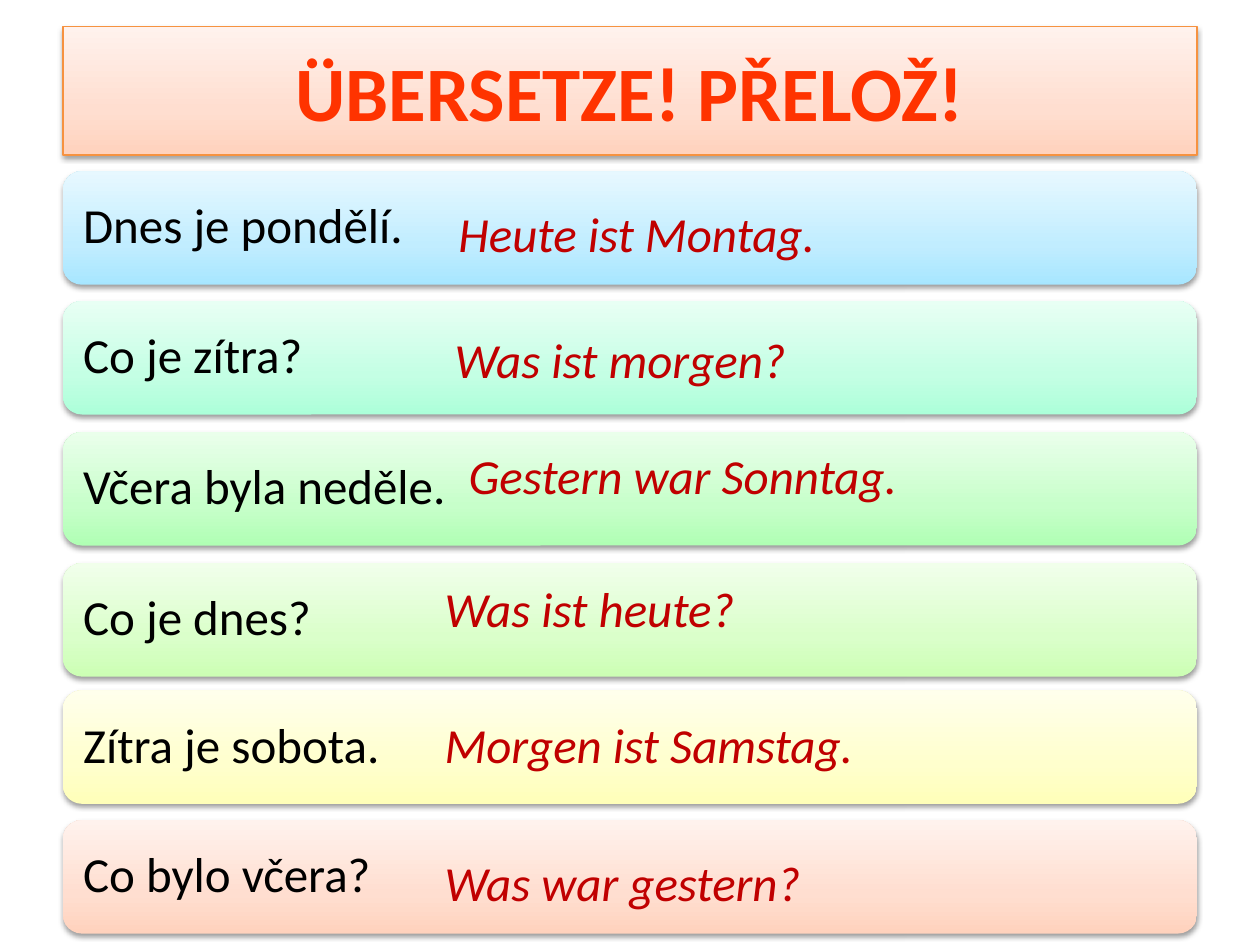
import copy

import lxml.etree
import pptx
import pptx.dml.color
import pptx.enum.shapes
import pptx.enum.text
import pptx.oxml.ns
import pptx.util

Inches = pptx.util.Inches
Pt = pptx.util.Pt
SHAPE = pptx.enum.shapes.MSO_SHAPE
ANCHOR = pptx.enum.text.MSO_ANCHOR
ALIGN = pptx.enum.text.PP_ALIGN
qn = pptx.oxml.ns.qn

COLORS = {
    "title": "FF3300",
    "border": "F69240",
    "czech": "000000",
    "german": "C00000",
    "shadow": "000000",
}
GRADIENTS = {
    "peach": ("FFD2BD", "FFDED0", "FFF2ED"),
    "blue": ("A7E6FF", "C1EDFF", "E7F8FF"),
    "mint": ("ACFFD9", "C4FFE4", "E8FFF4"),
    "green": ("B0FFB4", "C7FFCA", "EAFFEB"),
    "lime": ("CCFFB4", "DAFFCA", "F1FFEB"),
    "yellow": ("FFFFB9", "FFFFCD", "FFFFEC"),
}
STOPS = (0, 0.35, 1)
LEFT, WIDTH, BAR_HEIGHT, INSET = 0.5, 9, 0.9, 0.04

ROWS = [
    (1.36, "blue", "Dnes je pondělí.", "Heute ist Montag.", (3.54, 1.57, 3.15, 0.57)),
    (2.39, "mint", "Co je zítra?", "Was ist morgen?", (3.51, 2.57, 3.15, 0.57)),
    (3.43, "green", "Včera byla neděle.", "Gestern war Sonntag.", (3.62, 3.49, 3.78, 1.04)),
    (4.47, "lime", "Co je dnes?", "Was ist heute?", (3.43, 4.54, 2.99, 0.57)),
    (5.48, "yellow", "Zítra je sobota.", "Morgen ist Samstag.", (3.43, 5.62, 4.17, 0.57)),
    (6.51, "peach", "Co bylo včera?", "Was war gestern?", (3.43, 6.72, 3.39, 0.57)),
]


def rgb(value):
    return pptx.dml.color.RGBColor.from_string(value)


class Deck:
    """Holds the current slide and the worksheet style."""

    font = "Calibri"

    def __init__(self, slide):
        self.s = slide

    def panel(self, kind, box, gradient, border=None):
        sp = self.s.shapes.add_shape(kind, *map(Inches, box))
        sp.fill.gradient()
        sp.fill.gradient_angle = 90
        stops = sp._element.spPr.find(".//" + qn("a:gsLst"))
        stops.append(copy.deepcopy(stops[0]))
        for stop, position, color in zip(sp.fill.gradient_stops, STOPS, GRADIENTS[gradient]):
            stop.position = position
            stop.color.rgb = rgb(color)
        if border:
            sp.line.color.rgb = rgb(COLORS[border])
            sp.line.width = Pt(0.75)
        else:
            sp.line.fill.background()
        self.shadow(sp)
        return sp

    def shadow(self, sp):
        sp.shadow.inherit = False
        effects = sp._element.spPr.find(qn("a:effectLst"))
        outer = lxml.etree.SubElement(
            effects, qn("a:outerShdw"), blurRad=str(Pt(3.1)), dist=str(Pt(1.6)),
            dir="5400000", rotWithShape="0")
        color = lxml.etree.SubElement(outer, qn("a:srgbClr"), val=COLORS["shadow"])
        lxml.etree.SubElement(color, qn("a:alpha"), val="38000")

    def label(self, sp, text, color, size=28, bold=False, italic=False,
              align=ALIGN.LEFT, anchor=ANCHOR.MIDDLE):
        tf = sp.text_frame
        tf.word_wrap = True
        tf.vertical_anchor = anchor
        p = tf.paragraphs[0]
        p.text = text
        p.alignment = align
        p.font.name = self.font
        p.font.size = Pt(size)
        p.font.bold = bold
        p.font.italic = italic
        p.font.color.rgb = rgb(COLORS[color])
        return tf

    def title(self, text):
        sp = self.panel(SHAPE.RECTANGLE, (LEFT, 0.21, WIDTH, 1.02), "peach", "border")
        self.label(sp, text, "title", size=44, bold=True, align=ALIGN.CENTER)

    def sentence(self, top, gradient, text):
        self.panel(SHAPE.ROUNDED_RECTANGLE, (LEFT, top, WIDTH, BAR_HEIGHT), gradient)
        box = (LEFT + INSET, top + INSET, WIDTH - 2 * INSET, BAR_HEIGHT - 2 * INSET)
        sp = self.s.shapes.add_textbox(*map(Inches, box))
        tf = self.label(sp, text, "czech")
        tf.margin_left = tf.margin_right = tf.margin_top = tf.margin_bottom = Inches(0.12)
        tf.paragraphs[0].line_spacing = 0.9

    def translation(self, text, box):
        sp = self.s.shapes.add_textbox(*map(Inches, box))
        self.label(sp, text, "german", italic=True, anchor=ANCHOR.TOP)


def main():
    prs = pptx.Presentation()
    prs.slide_width, prs.slide_height = Inches(10), Inches(7.5)
    deck = Deck(prs.slides.add_slide(prs.slide_layouts[6]))
    deck.title("ÜBERSETZE! PŘELOŽ!")
    for top, gradient, czech, _, _ in ROWS:
        deck.sentence(top, gradient, czech)
    for _, _, _, german, box in ROWS:
        deck.translation(german, box)
    prs.save("out.pptx")


if __name__ == "__main__":
    main()
